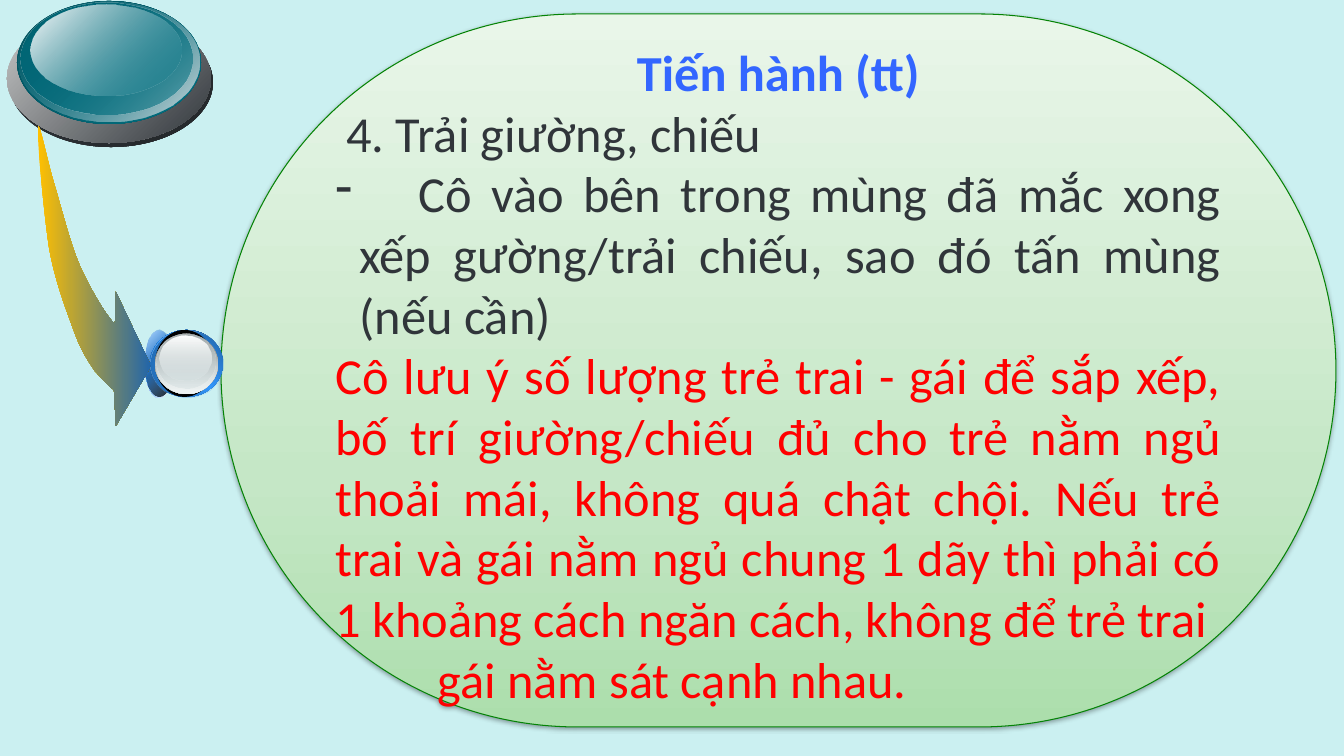
from lxml.etree import SubElement
from pptx import Presentation
from pptx.dml.color import RGBColor
from pptx.enum.shapes import MSO_SHAPE as Shape
from pptx.enum.text import MSO_ANCHOR as Anchor, PP_ALIGN as Align
from pptx.oxml.ns import qn
from pptx.util import Pt

# Content
TITLE = "Tiến hành (tt)"
RED, DARK = "FF0000", "30353A"
# text, colour, left margin px, first-line indent px, bullet
STEPS = [
    ("4. Trải giường, chiếu", DARK, 11, 0, None),
    ("\tCô vào bên trong mùng đã mắc xong xếp gường/trải chiếu, "
     "sao đó tấn mùng (nếu cần)", DARK, 24, -24, "-"),
    ("Cô lưu ý số lượng trẻ trai - gái để sắp xếp, bố trí giường/chiếu đủ cho "
     "trẻ nằm ngủ thoải mái, không quá chật chội. Nếu trẻ trai và gái nằm ngủ "
     "chung 1 dãy thì phải có 1 khoảng cách ngăn cách, không để trẻ trai",
     RED, 0, 0, None),
    ("gái nằm sát cạnh nhau.", RED, 102, 0, None),
]
BULLET_TEXT_TAB = 83

# Ellipses: box in px, angle, stops of (position, colour, opacity)
BUTTON = [
    ((9, 18, 204, 129), 45, [(0, "30353A", 100), (100, "23272A", 100)]),
    ((7, 14, 204, 129), 45, [(0, "C7C8C8", 100), (100, "30353A", 100)]),
    ((17, 1, 184, 123), 45, [(0, "01515D", 100), (100, "027182", 100)]),
    ((19, 2, 180, 120), 45, [(0, "027182", 0), (100, "D4DBDE", 100)]),
    ((21, 3, 171, 112), 45, [(0, "026675", 100), (100, "027182", 48)]),
    ((30, 5, 151, 91), 45, [(0, "FFFFFF", 100), (100, "027182", 38)]),
]
KNOB = [
    ((145, 331, 28, 67), 45,
     [(0, "FFFFFF", 100), (50, "3399FF", 100), (100, "FFFFFF", 100)]),
    ((145, 330, 28, 67), 45, [(0, "3399FF", 32), (100, "000000", 90)]),
    ((150, 330, 73, 67), 315,
     [(0, "1C538A", 100), (50, "3399FF", 100), (100, "1C538A", 100)]),
    ((150, 331, 73, 67), 45, [(0, "2061A2", 100), (100, "3399FF", 0)]),
    ((155, 330, 59, 67), 0, [(0, "000000", 100), (100, "000000", 100)]),
    ((155, 334, 63, 60), 90, [(0, "636869", 100), (100, "D6E1E2", 100)]),
    ((156, 334, 62, 59), 90, [(0, "D6E1E2", 0), (100, "F1F5F5", 100)]),
    ((156, 334, 59, 55), 90, [(0, "AAB2B3", 100), (100, "D6E1E2", 48)]),
    ((160, 336, 52, 45), 90, [(0, "FFFFFF", 100), (100, "D6E1E2", 38)]),
]
PANEL_BOX = (221, 14, 1115, 713)
PANEL_STOPS = [(0, "ACDEAC", 100), (35, "C5E7C6", 100), (100, "E9F6E9", 100)]

# Arrow outline: one point is a line, three points are a Bézier curve
ARROW_START = (38, 129)
ARROW = [
    [(37, 139), (44, 214), (49, 247)], [(55, 281), (66, 309), (74, 331)],
    [(81, 351), (89, 362), (95, 371)], [(108, 385)], [(114, 390)],
    [(116, 426)], [(151, 366)], [(116, 292)], [(115, 324)],
    [(109, 320), (90, 289), (80, 266)], [(70, 243), (61, 206), (54, 183)],
    [(47, 160), (38, 113), (38, 129)],
]
ARROW_STOPS = [(0, "FFC000", 100), (100, "2165AA", 100)]
CURVE_STEPS = 12
SCALE = 914400 / 100.8


def px(length):
    return round(length * SCALE)


def color(hex_text):
    return RGBColor.from_string(hex_text)


def add_color(parent, hex_text, opacity):
    clr = SubElement(parent, qn("a:srgbClr"), val=hex_text)
    if opacity < 100:
        SubElement(clr, qn("a:alpha"), val=str(opacity * 1000))


def paint(shape, angle, stops):
    """Gradient fill, no line, no shadow."""
    shape.shadow.inherit = False
    shape.line.fill.background()
    shape.fill.gradient()
    grad = shape._element.spPr.find(qn("a:gradFill"))
    for child in list(grad):
        grad.remove(child)
    stop_list = SubElement(grad, qn("a:gsLst"))
    for position, hex_text, opacity in stops:
        stop = SubElement(stop_list, qn("a:gs"), pos=str(position * 1000))
        add_color(stop, hex_text, opacity)
    SubElement(grad, qn("a:lin"), ang=str(angle * 60000), scaled="0")


def add_ellipses(shapes, ellipses):
    group = shapes.add_group_shape()
    for box, angle, stops in ellipses:
        paint(group.shapes.add_shape(Shape.OVAL, *map(px, box)), angle, stops)


def format_paragraph(paragraph, hex_text, align, bold=False):
    paragraph.alignment = align
    paragraph.line_spacing = Pt(43.3)
    paragraph.space_before = paragraph.space_after = Pt(0)
    for run in paragraph.runs:
        run.font.name, run.font.size, run.font.bold = "Calibri", Pt(36), bold
        run.font.color.rgb = color(hex_text)


def outline(start, segments):
    points = [start]
    for segment in segments:
        if len(segment) == 1:
            points += segment
            continue
        curve = [points[-1], *segment]
        for step in range(1, CURVE_STEPS + 1):
            t = step / CURVE_STEPS
            weights = ((1 - t) ** 3, 3 * t * (1 - t) ** 2, 3 * t * t * (1 - t), t ** 3)
            points.append(tuple(sum(w * p[axis] for w, p in zip(weights, curve))
                                for axis in (0, 1)))
    return points


def add_panel(shapes):
    panel = shapes.add_shape(Shape.ROUNDED_RECTANGLE, *map(px, PANEL_BOX))
    panel.adjustments[0] = 0.5
    paint(panel, 270, PANEL_STOPS)
    panel.line.color.rgb = color("048306")
    panel.line.width = Pt(0.75)
    effects = panel._element.spPr.find(qn("a:effectLst"))
    shadow = SubElement(effects, qn("a:outerShdw"), blurRad=str(Pt(3.1)),
                        dist=str(Pt(1.6)), dir="5400000", rotWithShape="0")
    add_color(shadow, "000000", 38)

    # Steps sit below the title line
    frame = panel.text_frame
    frame.word_wrap = True
    frame.vertical_anchor = Anchor.MIDDLE
    frame.margin_left = frame.margin_right = px(10)
    frame.margin_top, frame.margin_bottom = px(74), px(5)
    for index, (text, hex_text, margin, indent, bullet) in enumerate(STEPS):
        step = frame.add_paragraph() if index else frame.paragraphs[0]
        step.text = text
        format_paragraph(step, hex_text, Align.JUSTIFY)
        props = step._p.get_or_add_pPr()
        props.set("marL", str(px(margin)))
        props.set("indent", str(px(indent)))
        if bullet:
            SubElement(props, qn("a:buChar"), char=bullet)
            tabs = SubElement(props, qn("a:tabLst"))
            SubElement(tabs, qn("a:tab"), pos=str(px(BULLET_TEXT_TAB)), algn="l")


def main():
    deck = Presentation()
    deck.slide_width, deck.slide_height = px(1344), px(756)
    slide = deck.slides.add_slide(deck.slide_layouts[5])
    slide.background.fill.solid()
    slide.background.fill.fore_color.rgb = color("CBF0F1")
    shapes = slide.shapes

    add_ellipses(shapes, BUTTON)
    add_panel(shapes)
    add_ellipses(shapes, KNOB)

    # Curved arrow
    start, *rest = [(px(x), px(y)) for x, y in outline(ARROW_START, ARROW)]
    builder = shapes.build_freeform(*start)
    builder.add_line_segments(rest, close=True)
    paint(builder.convert_to_shape(), 0, ARROW_STOPS)

    # Title, in front of the panel
    title = shapes.title
    title.left, title.top, title.width, title.height = map(px, (335, 41, 887, 61))
    frame = title.text_frame
    frame.text = TITLE
    frame.vertical_anchor = Anchor.MIDDLE
    frame.margin_top = frame.margin_bottom = 0
    format_paragraph(frame.paragraphs[0], "3366FF", Align.CENTER, bold=True)
    shapes._spTree.append(title._element)

    deck.save("out.pptx")


if __name__ == "__main__":
    main()
